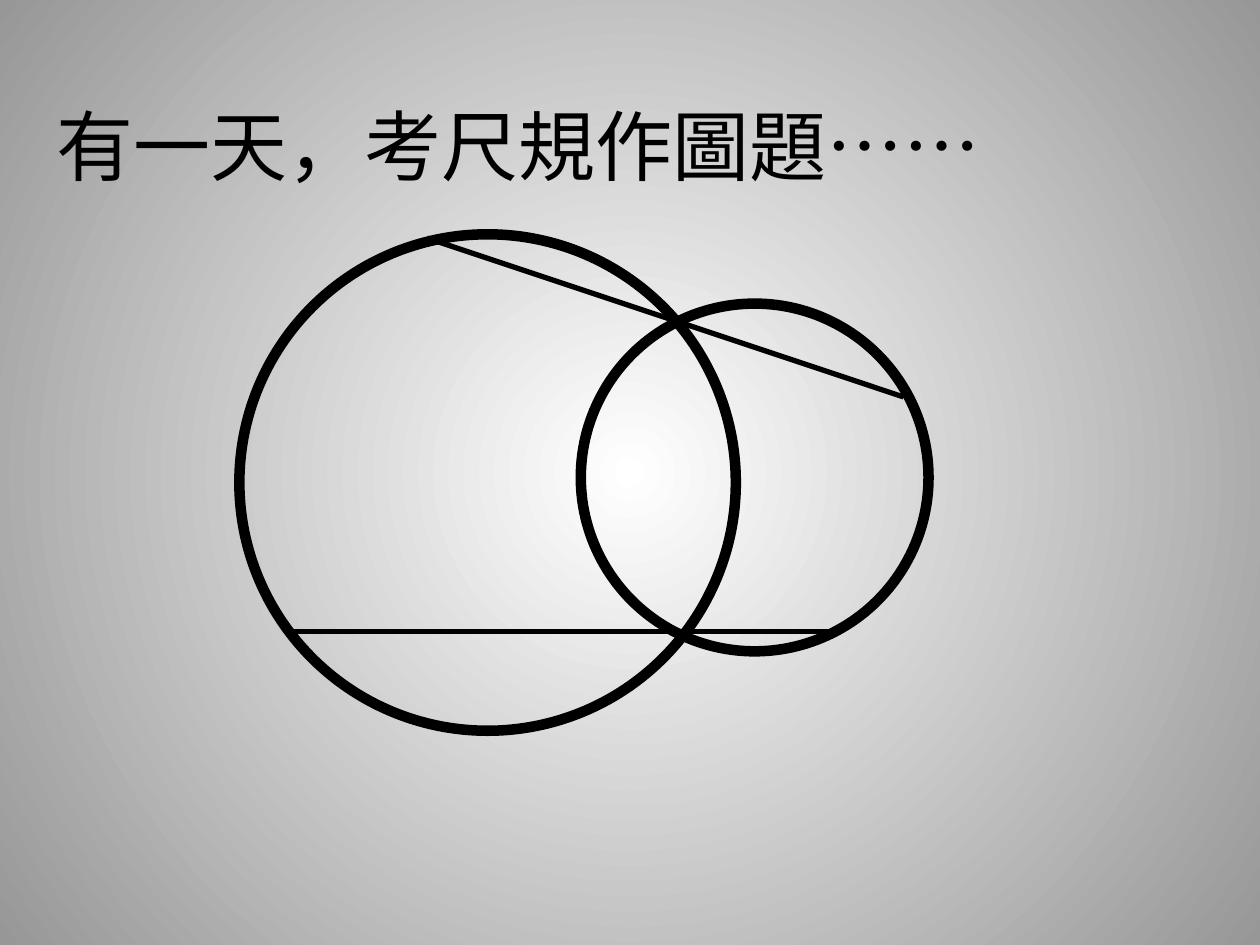
import pptx
import pptx.dml.color
import pptx.enum.shapes
import pptx.enum.text
import pptx.oxml.ns
import pptx.oxml.xmlchemy
import pptx.util
from lxml import etree

Inches = pptx.util.Inches
Pt = pptx.util.Pt
qn = pptx.oxml.ns.qn

BLACK = pptx.dml.color.RGBColor(0x00, 0x00, 0x00)
WHITE = pptx.dml.color.RGBColor(0xFF, 0xFF, 0xFF)
GREY = pptx.dml.color.RGBColor(0x97, 0x97, 0x97)


class GeometrySlide:
    font_name = "Noto Sans CJK SC"
    title_size = Pt(44)
    circle_width = Pt(6)
    chord_width = Pt(3)

    def __init__(self, deck):
        self.slide = deck.slides.add_slide(deck.slide_layouts[5])

    def radial_background(self, centre_color, edge_color):
        fill = self.slide.background.fill
        fill.gradient()
        for stop, color in zip(fill.gradient_stops, (centre_color, edge_color)):
            stop.color.rgb = color
        for stop, position in zip(fill.gradient_stops, (0, 1)):
            stop.position = position
        gradient = self.slide.element.find(".//" + qn("a:gradFill"))
        gradient.remove(gradient.find(qn("a:lin")))
        radial = etree.SubElement(gradient, qn("a:path"), path="circle")
        middle = dict.fromkeys("ltrb", "50000")
        etree.SubElement(radial, qn("a:fillToRect"), middle)

    def title(self, text, left, top, width, height):
        heading = self.slide.shapes.title
        heading.left, heading.top = Inches(left), Inches(top)
        heading.width, heading.height = Inches(width), Inches(height)
        frame = heading.text_frame
        frame.text = text
        frame.vertical_anchor = pptx.enum.text.MSO_ANCHOR.MIDDLE
        paragraph = frame.paragraphs[0]
        paragraph.alignment = pptx.enum.text.PP_ALIGN.LEFT
        font = paragraph.font
        font.name = self.font_name
        font.size = self.title_size
        font.color.rgb = BLACK
        latin = heading.element.find(".//" + qn("a:latin"))
        east_asian = etree.Element(qn("a:ea"), typeface=self.font_name)
        latin.addnext(east_asian)

    def circle(self, left, top, diameter):
        circle = self.slide.shapes.add_shape(
            pptx.enum.shapes.MSO_SHAPE.OVAL,
            Inches(left), Inches(top), Inches(diameter), Inches(diameter))
        circle.shadow.inherit = False
        circle.fill.background()
        circle.line.color.rgb = BLACK
        circle.line.width = self.circle_width

    def chord(self, start, end):
        chord = self.slide.shapes.add_connector(
            pptx.enum.shapes.MSO_CONNECTOR.STRAIGHT,
            *(Inches(value) for value in (*start, *end)))
        chord.line.color.rgb = BLACK
        chord.line.width = self.chord_width
        etree.SubElement(chord.element.spPr, qn("a:effectLst"))


def main():
    deck = pptx.Presentation()
    deck.slide_width, deck.slide_height = Inches(10), Inches(7.5)

    page = GeometrySlide(deck)
    page.radial_background(WHITE, GREY)
    page.title("有一天，考尺規作圖題……", 0.35, 0.52, 9.08, 1.25)
    page.circle(1.9, 1.86, 3.94)
    page.chord((2.32, 5.01), (6.57, 5.01))
    page.chord((3.39, 1.89), (7.17, 3.15))
    page.circle(4.61, 2.41, 2.76)

    deck.save("out.pptx")


if __name__ == "__main__":
    main()
